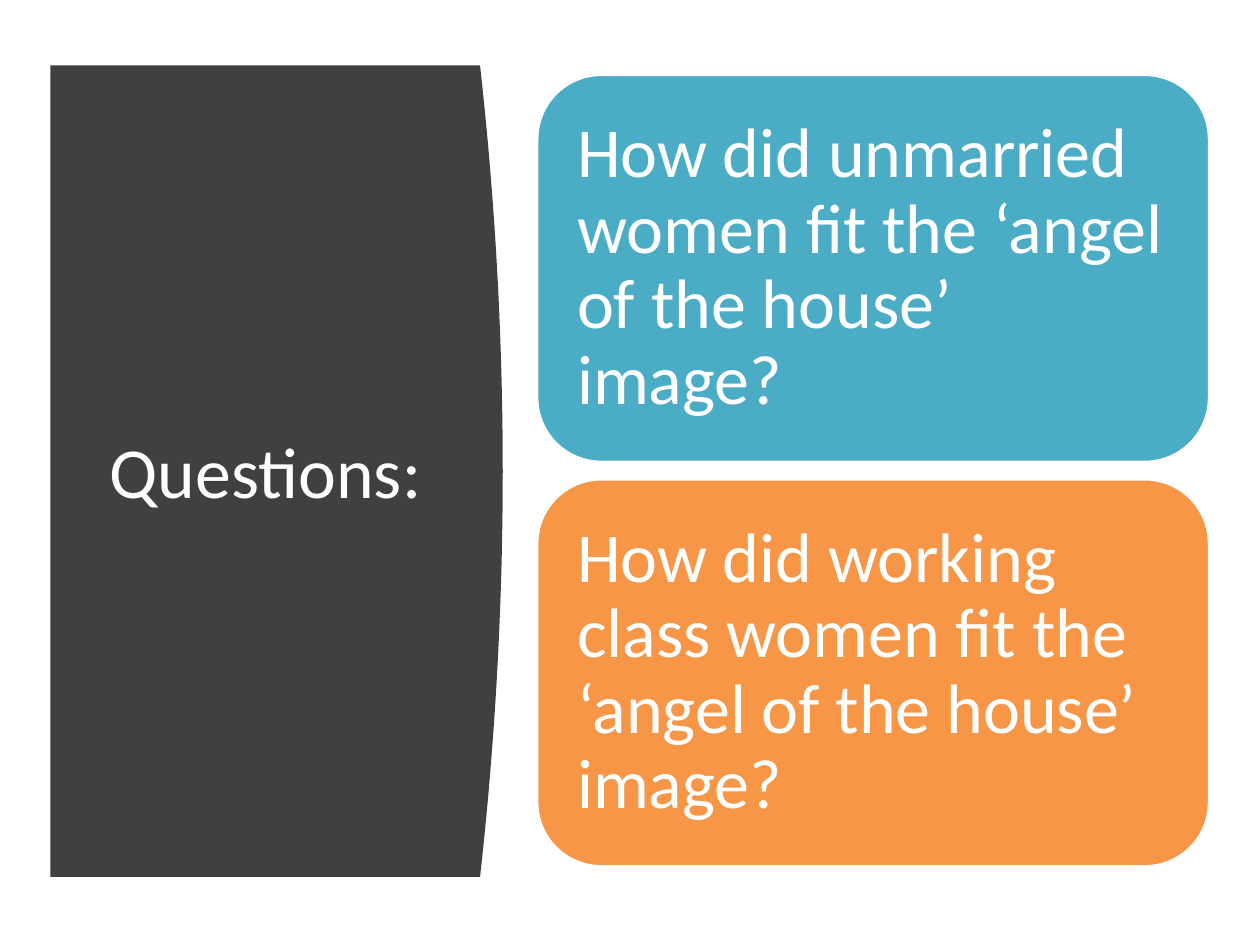
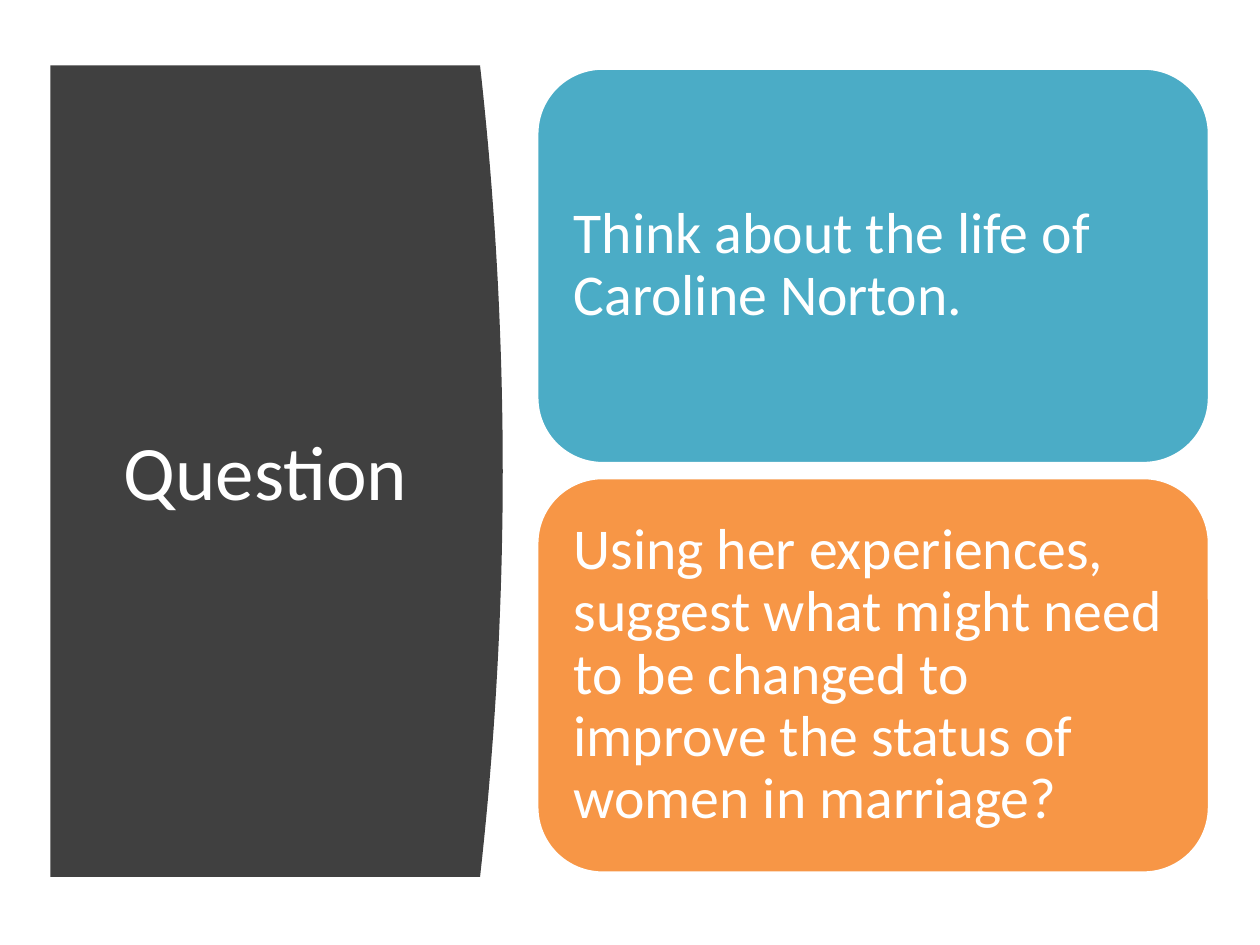
from dataclasses import dataclass

import pptx
import pptx.dml.color
import pptx.enum.shapes
import pptx.enum.text
import pptx.util

PX = 9144  # EMU per px, 100 px to the inch
FONT = "Calibri"
WHITE = "FFFFFF"
PANEL_COLOUR = "404040"
CARD_COLOURS = ("4BACC6", "F79646")

PANEL_LEFT, PANEL_TOP, PANEL_RIGHT, PANEL_BOTTOM = 40, 52, 381, 696
BULGE, BULGE_STEPS = 18, 40
TITLE_BOX = (71, 111, 280, 524)
CARD_LEFT, CARD_WIDTH = 426, 534


@dataclass(frozen=True)
class QuestionSlide:
    title: str
    title_size: int
    questions: tuple[str, ...]
    question_size: int
    cards_top: int
    card_height: int
    card_gap: int
    card_inset: int


QUESTION_SLIDES = (
    QuestionSlide(
        "Questions:", 41,
        ("How did unmarried women fit the ‘angel of the house’ image?",
         "How did working class women fit the ‘angel of the house’ image?"),
        40, cards_top=59, card_height=308, card_gap=13, card_inset=17),
    QuestionSlide(
        "Question", 44,
        ("Think about the life of Caroline Norton.",
         "Using her experiences, suggest what might need to be changed "
         "to improve the status of women in marriage?"),
        33, cards_top=54, card_height=314, card_gap=11, card_inset=14),
)


def px(length: float) -> int:
    return round(length * PX)


def colour(hex_code: str) -> pptx.dml.color.RGBColor:
    return pptx.dml.color.RGBColor.from_string(hex_code)


def write(shape, text: str, *, size: int, align, inset: tuple[int, int],
          line_spacing: float = 1.0) -> None:
    """Fill a shape with one middle-anchored paragraph; inset is (sides, ends)."""
    frame = shape.text_frame
    frame.word_wrap = True
    frame.vertical_anchor = pptx.enum.text.MSO_ANCHOR.MIDDLE
    frame.margin_left = frame.margin_right = px(inset[0])
    frame.margin_top = frame.margin_bottom = px(inset[1])
    paragraph = frame.paragraphs[0]
    paragraph.alignment = align
    paragraph.line_spacing = line_spacing
    run = paragraph.add_run()
    run.text = text
    run.font.name = FONT
    run.font.size = pptx.util.Pt(size)
    run.font.color.rgb = colour(WHITE)


def paint(shape, fill: str) -> None:
    shape.shadow.inherit = False
    shape.fill.solid()
    shape.fill.fore_color.rgb = colour(fill)


def add_title_panel(slide) -> None:
    """Draw the dark panel whose right edge bows out as a parabola."""
    height = PANEL_BOTTOM - PANEL_TOP
    edge = []
    for step in range(BULGE_STEPS + 1):
        t = step / BULGE_STEPS
        x = PANEL_RIGHT + BULGE * 4 * t * (1 - t)
        edge.append((px(x), px(PANEL_TOP + height * t)))
    outline = slide.shapes.build_freeform(px(PANEL_LEFT), px(PANEL_TOP))
    outline.add_line_segments(edge + [(px(PANEL_LEFT), px(PANEL_BOTTOM))], close=True)
    panel = outline.convert_to_shape()
    paint(panel, PANEL_COLOUR)
    panel.line.fill.background()


def add_title(slide, text: str, size: int) -> None:
    title = slide.shapes.add_textbox(*map(px, TITLE_BOX))
    write(title, text, size=size, align=pptx.enum.text.PP_ALIGN.CENTER, inset=(10, 5))


def add_cards(slide, content: QuestionSlide) -> None:
    pitch = content.card_height + content.card_gap
    for row, (question, fill) in enumerate(zip(content.questions, CARD_COLOURS)):
        card = slide.shapes.add_shape(
            pptx.enum.shapes.MSO_SHAPE.ROUNDED_RECTANGLE,
            px(CARD_LEFT), px(content.cards_top + row * pitch),
            px(CARD_WIDTH), px(content.card_height))
        paint(card, fill)
        card.line.color.rgb = colour(WHITE)
        card.line.width = pptx.util.Pt(2)
        write(card, question, size=content.question_size,
              align=pptx.enum.text.PP_ALIGN.LEFT,
              inset=(content.card_inset, content.card_inset), line_spacing=0.9)


def main() -> None:
    deck = pptx.Presentation()
    deck.slide_width, deck.slide_height = px(1000), px(750)
    blank = deck.slide_layouts[6]
    for content in QUESTION_SLIDES:
        slide = deck.slides.add_slide(blank)
        add_title_panel(slide)
        add_title(slide, content.title, content.title_size)
        add_cards(slide, content)
    deck.save("out.pptx")


if __name__ == "__main__":
    main()
